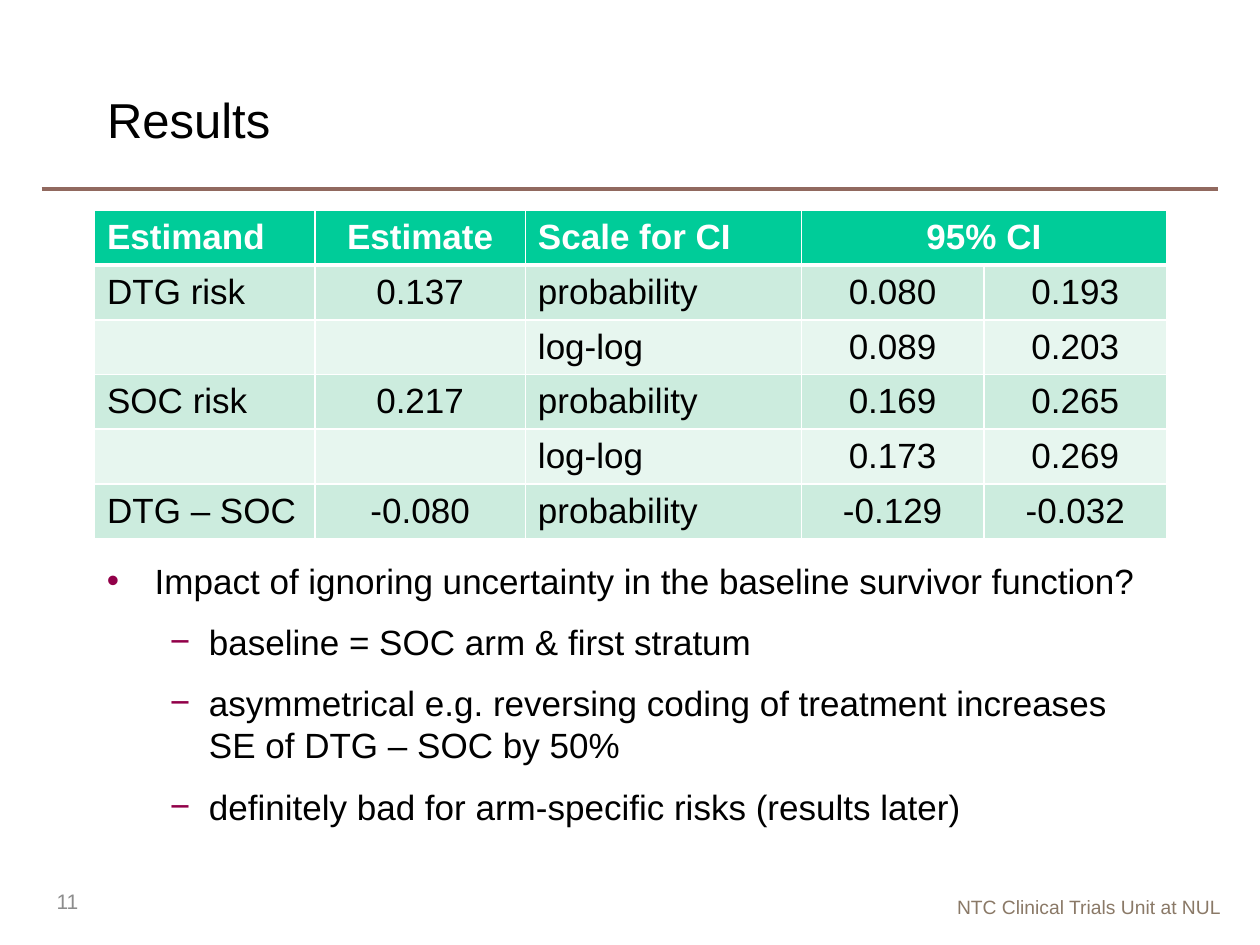
from dataclasses import dataclass

from lxml.etree import SubElement
from pptx import Presentation
from pptx.dml.color import RGBColor
from pptx.enum.shapes import MSO_CONNECTOR
from pptx.enum.text import MSO_ANCHOR, PP_ALIGN
from pptx.oxml import parse_xml
from pptx.oxml.ns import nsdecls, qn
from pptx.util import Inches, Pt

FONT = "Arial"
COLORS = {
    "text": "000000", "white": "FFFFFF", "rule": "91695F", "footer": "8A7967",
    "number": "8C8C8C", "bullet": "920049", "header": "00CC99",
    "dark_band": "CCECDE", "light_band": "E7F6EF",
}


@dataclass
class Box:
    left: float
    top: float
    width: float
    height: float

    def lengths(self) -> tuple:
        return tuple(Inches(v) for v in (self.left, self.top, self.width, self.height))


@dataclass
class Column:
    width: float
    align: PP_ALIGN


@dataclass
class Bullet:
    text: str
    level: int = 0


@dataclass
class BulletStyle:
    mark: str
    margin: float
    hanging: float


COLUMNS = [
    Column(1.75, PP_ALIGN.LEFT),
    Column(1.67, PP_ALIGN.CENTER),
    Column(2.19, PP_ALIGN.LEFT),
    Column(1.45, PP_ALIGN.CENTER),
    Column(1.45, PP_ALIGN.CENTER),
]
RESULTS = [
    ("Estimand", "Estimate", "Scale for CI", "95% CI", ""),
    ("DTG risk", "0.137", "probability", "0.080", "0.193"),
    ("", "", "log-log", "0.089", "0.203"),
    ("SOC risk", "0.217", "probability", "0.169", "0.265"),
    ("", "", "log-log", "0.173", "0.269"),
    ("DTG – SOC", "-0.080", "probability", "-0.129", "-0.032"),
]
BULLETS = [
    Bullet("Impact of ignoring uncertainty in the baseline survivor function?"),
    Bullet("baseline = SOC arm & first stratum", 1),
    Bullet("asymmetrical e.g. reversing coding of treatment increases "
           "SE of DTG – SOC by 50%", 1),
    Bullet("definitely bad for arm-specific risks (results later)", 1),
]
BULLET_STYLES = [BulletStyle("•", 0.38, 0.38), BulletStyle("−", 0.81, 0.31)]


def rgb(color: str) -> RGBColor:
    return RGBColor.from_string(COLORS[color])


def format_text(paragraph, size: float, color: str, align=PP_ALIGN.LEFT, bold=False) -> None:
    paragraph.alignment = align
    for run in paragraph.runs:
        run.font.name = FONT
        run.font.size = Pt(size)
        run.font.bold = bold
        run.font.color.rgb = rgb(color)


def add_text(slide, box: Box, text: str, size: float, color: str,
             align=PP_ALIGN.LEFT, anchor=MSO_ANCHOR.TOP) -> None:
    frame = slide.shapes.add_textbox(*box.lengths()).text_frame
    frame.word_wrap = True
    frame.vertical_anchor = anchor
    frame.text = text
    format_text(frame.paragraphs[0], size, color, align)


def add_title(slide, box: Box, text: str) -> None:
    title = slide.shapes.title
    title.left, title.top, title.width, title.height = box.lengths()
    title.text_frame.text = text
    title.text_frame.vertical_anchor = MSO_ANCHOR.MIDDLE
    format_text(title.text_frame.paragraphs[0], 28, "text")


def add_rule(slide, left: float, right: float, top: float) -> None:
    rule = slide.shapes.add_connector(
        MSO_CONNECTOR.STRAIGHT, Inches(left), Inches(top), Inches(right), Inches(top))
    rule.line.color.rgb = rgb("rule")
    rule.line.width = Pt(1.75)
    SubElement(rule._element.spPr, qn("a:effectLst"))


def set_borders(cell, bottom: float) -> None:
    """Draw white edges, 1 pt wide except for the bottom one."""
    properties = cell._tc.get_or_add_tcPr()
    edges = {"lnL": 1, "lnR": 1, "lnT": 1, "lnB": bottom}
    for position, (edge, width) in enumerate(edges.items()):
        properties.insert(position, parse_xml(
            f'<a:{edge} {nsdecls("a")} w="{Pt(width)}"><a:solidFill>'
            f'<a:srgbClr val="{COLORS["white"]}"/></a:solidFill></a:{edge}>'))


def add_results_table(slide, box: Box) -> None:
    table = slide.shapes.add_table(len(RESULTS), len(COLUMNS), *box.lengths()).table
    table.horz_banding = False
    for table_column, column in zip(table.columns, COLUMNS):
        table_column.width = Inches(column.width)
    for r, values in enumerate(RESULTS):
        header = r == 0
        band = "header" if header else "dark_band" if r % 2 else "light_band"
        for c, (value, column) in enumerate(zip(values, COLUMNS)):
            cell = table.cell(r, c)
            cell.text_frame.text = value
            cell.vertical_anchor = MSO_ANCHOR.MIDDLE
            format_text(cell.text_frame.paragraphs[0], 20,
                        "white" if header else "text", column.align, header)
            cell.fill.solid()
            cell.fill.fore_color.rgb = rgb(band)
            set_borders(cell, 3 if header else 1)
    table.cell(0, 3).merge(table.cell(0, 4))


def add_bullets(slide, box: Box) -> None:
    frame = slide.shapes.add_textbox(*box.lengths()).text_frame
    frame.word_wrap = True
    frame.text = "\n".join(bullet.text for bullet in BULLETS)
    for paragraph, bullet in zip(frame.paragraphs, BULLETS):
        style = BULLET_STYLES[bullet.level]
        paragraph.level = bullet.level
        paragraph.space_before = Pt(5)
        paragraph.space_after = Pt(6)
        format_text(paragraph, 20, "text")
        properties = paragraph._p.get_or_add_pPr()
        properties.set("marL", str(Inches(style.margin)))
        properties.set("indent", str(-Inches(style.hanging)))
        mark_color = SubElement(properties, qn("a:buClr"))
        SubElement(mark_color, qn("a:srgbClr"), val=COLORS["bullet"])
        SubElement(properties, qn("a:buFont"), typeface=FONT)
        SubElement(properties, qn("a:buChar"), char=style.mark)


def main() -> None:
    deck = Presentation()
    deck.slide_width, deck.slide_height = Inches(10), Inches(7.5)
    slide = deck.slides.add_slide(deck.slide_layouts[5])
    add_rule(slide, 0.33, 9.67, 1.5)
    add_text(slide, Box(6.46, 7.06, 3.33, 0.29), "NTC Clinical Trials Unit at NUL",
             11, "footer", PP_ALIGN.RIGHT)
    add_results_table(slide, Box(0.75, 1.67, 8.5, 2.6))
    add_title(slide, Box(0.75, 0.5, 8.56, 0.89), "Results")
    add_text(slide, Box(0.35, 6.95, 2.25, 0.4), "11", 12, "number",
             anchor=MSO_ANCHOR.MIDDLE)
    add_bullets(slide, Box(0.75, 4.39, 8.5, 2.43))
    deck.save("out.pptx")


if __name__ == "__main__":
    main()
